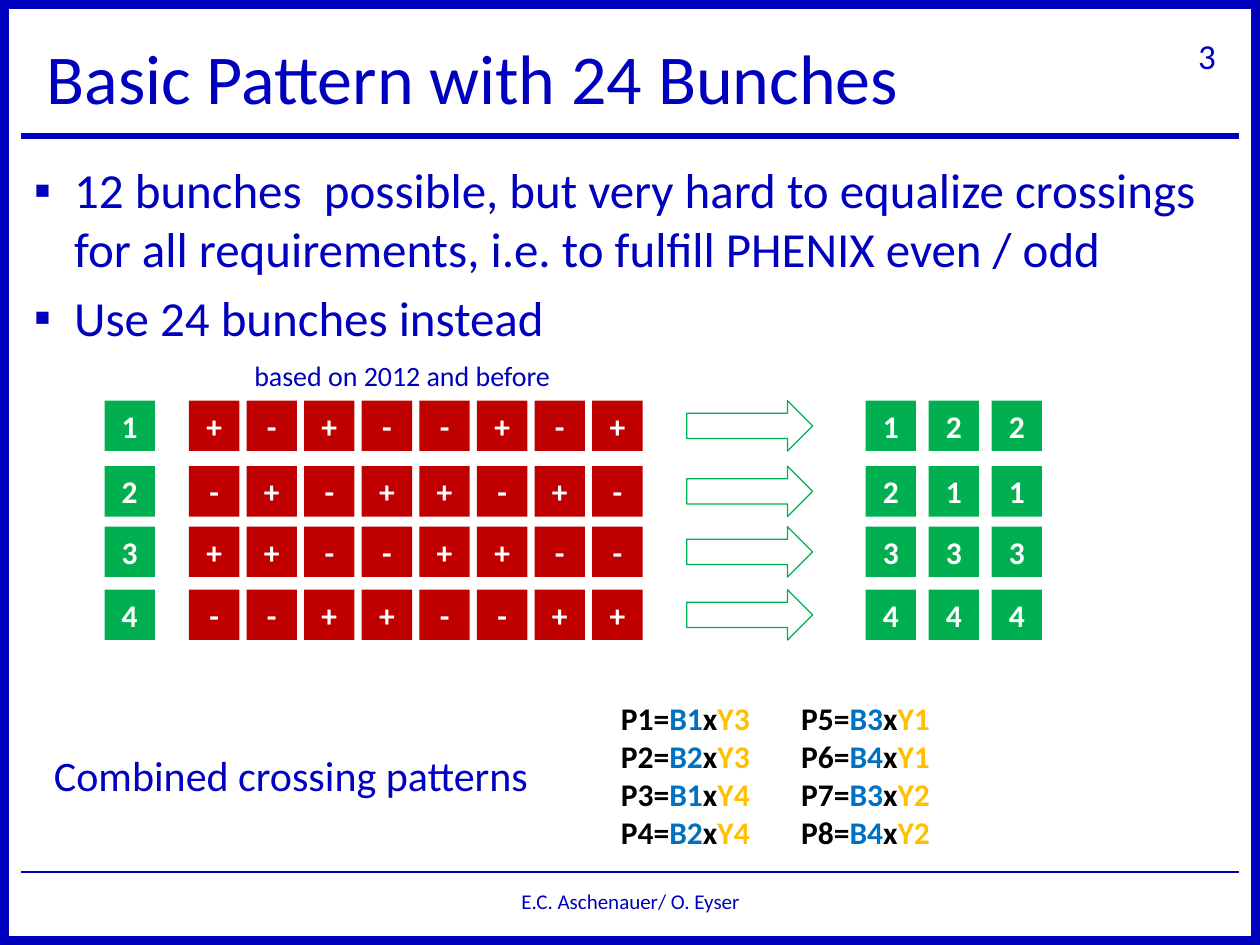
from dataclasses import dataclass
from lxml import etree
from pptx import Presentation, util as u
from pptx.dml.color import RGBColor
from pptx.enum import shapes, text
from pptx.oxml import ns


@dataclass(frozen=True)
class Theme:
    font: str = "Calibri"
    navy: str = "0000BF"
    red: str = "C00000"
    green: str = "00B050"
    white: str = "FFFFFF"
    black: str = "000000"
    blue: str = "0070C0"
    yellow: str = "FFC000"
    title: int = 40
    body: int = 28
    heading: int = 24
    number: int = 20
    cell: int = 18
    caption: int = 16
    footer: int = 12


THEME = Theme()
WIDTH, HEIGHT = 10, 7.5

TITLE = "Basic Pattern with 24 Bunches"
POINTS = [
    "12 bunches  possible, but very hard to equalize crossings for all requirements, "
    "i.e. to fulfill PHENIX even / odd",
    "Use 24 bunches instead",
]
PATTERNS = [
    ("1", "+-+--+-+", "122"),
    ("2", "-+-++-+-", "211"),
    ("3", "++--++--", "333"),
    ("4", "--++--++", "444"),
]
CROSSINGS = [
    [("P1", "B1", "Y3"), ("P2", "B2", "Y3"), ("P3", "B1", "Y4"), ("P4", "B2", "Y4")],
    [("P5", "B3", "Y1"), ("P6", "B4", "Y1"), ("P7", "B3", "Y2"), ("P8", "B4", "Y2")],
]

ROW_TOPS = [3.18, 3.7, 4.18, 4.68]
CELL = 0.4
LABEL_LEFT = 0.83
SIGN_LEFT, SIGN_STEP = 1.5, 3.2 / 7
ARROW_LEFT, ARROW_WIDTH = 5.45, 1
RESULT_LEFT, RESULT_STEP = 6.87, 0.5
CROSSING_LEFT, CROSSING_STEP = 4.83, 1.43
RULE_MARGIN = 0.17
RULES = [(1.08, 3), (6.92, 1.5)]
WIDE_INSETS = (0.2, 0.1)
TIGHT_INSETS = (0.1, 0.05)

prs = Presentation()
prs.slide_width, prs.slide_height = u.Inches(WIDTH), u.Inches(HEIGHT)
slide = prs.slides.add_slide(prs.slide_layouts[5])


def inches(*lengths):
    return [u.Inches(length) for length in lengths]


def rgb(color):
    return RGBColor.from_string(color)


def apply(target, values):
    for name, value in values.items():
        setattr(target, name, value)


def write(frame, paragraphs, size, align=text.PP_ALIGN.LEFT, bold=False,
          anchor=text.MSO_ANCHOR.TOP, insets=TIGHT_INSETS, wrap=True):
    side, end = inches(*insets)
    apply(frame, dict(auto_size=text.MSO_AUTO_SIZE.NONE, word_wrap=wrap,
                      vertical_anchor=anchor, margin_left=side, margin_right=side,
                      margin_top=end, margin_bottom=end))
    for index, runs in enumerate(paragraphs):
        paragraph = frame.add_paragraph() if index else frame.paragraphs[0]
        paragraph.alignment = align
        for words, color in runs:
            run = paragraph.add_run()
            run.text = words
            apply(run.font, dict(name=THEME.font, size=u.Pt(size), bold=bold))
            run.font.color.rgb = rgb(color)


def add_text(box, paragraphs, size, **options):
    frame = slide.shapes.add_textbox(*inches(*box)).text_frame
    write(frame, paragraphs, size, **options)
    return frame


def add_shape(kind, box, fill=None, line=None, weight=0):
    shape = slide.shapes.add_shape(kind, *inches(*box))
    shape.shadow.inherit = False
    if fill:
        shape.fill.solid()
        shape.fill.fore_color.rgb = rgb(fill)
    else:
        shape.fill.background()
    if line:
        shape.line.color.rgb = rgb(line)
        shape.line.width = u.Pt(weight)
    else:
        shape.line.fill.background()
    return shape


def add_cell(left, top, symbol, fill):
    cell = add_shape(shapes.MSO_SHAPE.RECTANGLE, (left, top, CELL, CELL), fill)
    write(cell.text_frame, [[(symbol, THEME.white)]], THEME.cell, bold=True,
          align=text.PP_ALIGN.CENTER, anchor=text.MSO_ANCHOR.MIDDLE)


def add_rule(top, weight):
    rule = slide.shapes.add_connector(
        shapes.MSO_CONNECTOR.STRAIGHT,
        *inches(RULE_MARGIN, top, WIDTH - RULE_MARGIN, top))
    rule.line.color.rgb = rgb(THEME.navy)
    rule.line.width = u.Pt(weight)
    etree.SubElement(rule._element.spPr, ns.qn("a:effectLst"))


def add_bullet(paragraph):
    paragraph.space_before = u.Pt(THEME.body * 0.2)
    props = paragraph._p.get_or_add_pPr()
    indent = u.Inches(0.32)
    props.set("marL", str(indent))
    props.set("indent", str(-indent))
    etree.SubElement(props, ns.qn("a:buFont"), typeface="Arial")
    etree.SubElement(props, ns.qn("a:buChar"), char="▪")


add_shape(shapes.MSO_SHAPE.RECTANGLE, (0, 0, WIDTH, HEIGHT), line=THEME.navy, weight=10)
for top, weight in RULES:
    add_rule(top, weight)

title = slide.shapes.title
apply(title, dict(zip(("left", "top", "width", "height"),
                      inches(RULE_MARGIN, 0.17, 8.67, 0.88))))
write(title.text_frame, [[(TITLE, THEME.navy)]], THEME.title,
      anchor=text.MSO_ANCHOR.MIDDLE, insets=WIDE_INSETS)

points = add_text((RULE_MARGIN, 1.22, 9.75, 5.53),
                  [[(point, THEME.navy)] for point in POINTS], THEME.body)
for paragraph in points.paragraphs:
    add_bullet(paragraph)

for top, (label, signs, results) in zip(ROW_TOPS, PATTERNS):
    add_cell(LABEL_LEFT, top, label, THEME.green)
    for column, sign in enumerate(signs):
        add_cell(SIGN_LEFT + column * SIGN_STEP, top, sign, THEME.red)
    add_shape(shapes.MSO_SHAPE.RIGHT_ARROW, (ARROW_LEFT, top, ARROW_WIDTH, CELL),
              line=THEME.green, weight=0.75)
    for column, result in enumerate(results):
        add_cell(RESULT_LEFT + column * RESULT_STEP, top, result, THEME.green)

add_text((1.92, 2.8, 2.59, 0.37), [[("based on 2012 and before", THEME.navy)]],
         THEME.caption, wrap=False)
add_text((0.33, 5.9, 4, 0.5), [[("Combined crossing patterns", THEME.navy)]],
         THEME.heading, wrap=False)
for column, crossings in enumerate(CROSSINGS):
    formulas = [[(name + "=", THEME.black), (blue, THEME.blue),
                 ("x", THEME.black), (yellow, THEME.yellow)]
                for name, blue, yellow in crossings]
    add_text((CROSSING_LEFT + column * CROSSING_STEP, 5.5, 1.24, 1.31), formulas,
             THEME.cell, bold=True, wrap=False)

add_text((RULE_MARGIN, 6.95, 9.67, 0.4), [[("E.C. Aschenauer/ O. Eyser", THEME.navy)]],
         THEME.footer, align=text.PP_ALIGN.CENTER, anchor=text.MSO_ANCHOR.MIDDLE)
add_text((9.12, 0.17, 0.73, 0.54), [[("3", THEME.navy)]], THEME.number,
         align=text.PP_ALIGN.RIGHT, anchor=text.MSO_ANCHOR.MIDDLE,
         insets=WIDE_INSETS, wrap=False)

prs.save("out.pptx")
